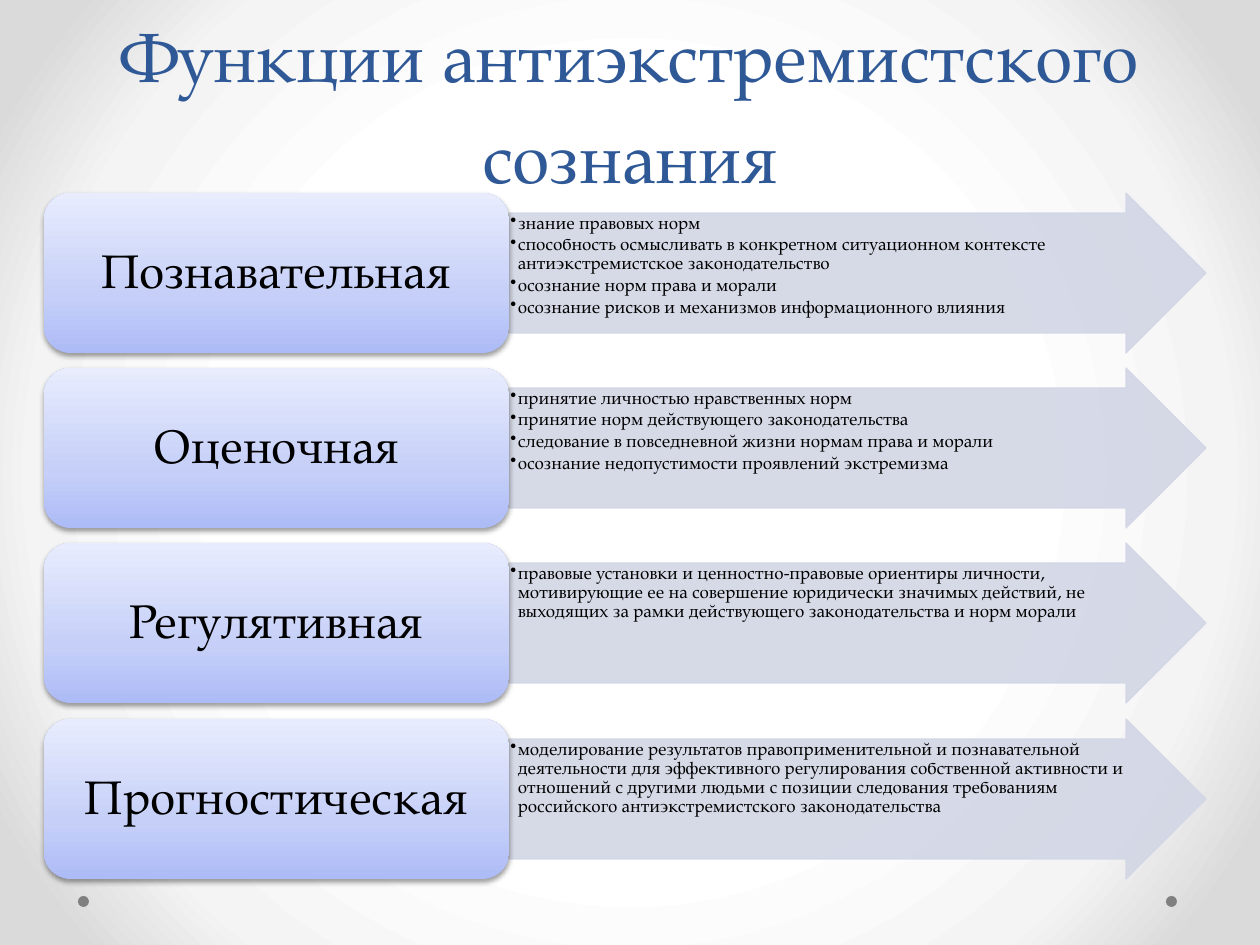
from dataclasses import dataclass

from pptx import Presentation
from pptx import util as u
from pptx.dml.color import RGBColor
from pptx.enum import shapes, text
from pptx.oxml import parse_xml
from pptx.oxml.ns import nsdecls, qn

PX = 914400 / 126  # EMU per pixel


@dataclass(frozen=True)
class Theme:
    font: str = "TeX Gyre Pagella"
    title_color: str = "2F5897"
    text_color: str = "000000"
    arrow_color: str = "D2D6E5"
    dot_color: str = "808080"
    title_size: int = 40
    label_size: int = 27
    item_size: int = 10
    background: tuple = ((50, "FFFFFF"), (76, "F4F4F4"), (92, "DADADA"))
    label_fill: tuple = ((0, "ADBBF6"), (35, "C5CFF8"), (100, "E8ECFD"))


THEME = Theme()
TITLE = "Функции антиэкстремистского сознания"
FUNCTIONS = {
    "Познавательная": [
        "знание правовых норм",
        "способность осмысливать в конкретном ситуационном контексте "
        "антиэкстремистское законодательство",
        "осознание норм права и морали",
        "осознание рисков и механизмов информационного влияния",
    ],
    "Оценочная": [
        "принятие личностью нравственных норм",
        "принятие норм действующего законодательства",
        "следование в повседневной жизни нормам права и морали",
        "осознание недопустимости проявлений экстремизма",
    ],
    "Регулятивная": [
        "правовые установки и ценностно-правовые ориентиры личности, "
        "мотивирующие ее на совершение юридически значимых действий, не "
        "выходящих за рамки действующего законодательства и норм морали",
    ],
    "Прогностическая": [
        "моделирование результатов правоприменительной и познавательной "
        "деятельности для эффективного регулирования собственной активности и "
        "отношений с другими людьми с позиции следования требованиям "
        "российского антиэкстремистского законодательства",
    ],
}

# Row geometry in px
ROW_TOP, ROW_SPAN, ROW_HEIGHT = 193, 526, 160
LABEL_LEFT, LABEL_WIDTH, ARROW_WIDTH = 44, 465, 697


def px(*lengths):
    return [u.Emu(round(length * PX)) for length in lengths]


def set_values(target, values):
    for name, value in values.items():
        setattr(target, name, value)


def write_paragraph(paragraph, content, size, color, **values):
    paragraph.text = content
    set_values(paragraph, values)
    set_values(paragraph.font, {"name": THEME.font, "size": u.Pt(size)})
    paragraph.font.color.rgb = RGBColor.from_string(color)


def format_frame(frame, anchor, side, edge):
    set_values(frame, {
        "word_wrap": True, "vertical_anchor": anchor,
        "margin_left": side, "margin_right": side,
        "margin_top": edge, "margin_bottom": edge,
    })


def add_shape(slide, kind, box, color):
    shape = slide.shapes.add_shape(kind, *px(*box))
    shape.shadow.inherit = False
    shape.fill.solid()
    shape.fill.fore_color.rgb = RGBColor.from_string(color)
    shape.line.fill.background()
    return shape


def replace_with_gradient(properties, stops, direction):
    """Swap the solid fill of a property element for a gradient."""
    stop_xml = "".join(
        f'<a:gs pos="{position * 1000}"><a:srgbClr val="{color}"/></a:gs>'
        for position, color in stops)
    gradient = parse_xml(
        f'<a:gradFill {nsdecls("a")} rotWithShape="1">'
        f"<a:gsLst>{stop_xml}</a:gsLst>{direction}</a:gradFill>")
    properties.replace(properties.find(qn("a:solidFill")), gradient)


def paint_background(slide):
    slide.background.fill.solid()
    replace_with_gradient(
        slide.element.find(".//" + qn("p:bgPr")), THEME.background,
        '<a:path path="circle"><a:fillToRect l="50000" t="50000" r="50000" '
        'b="50000"/></a:path>')


def add_title(slide):
    title = slide.shapes.title
    set_values(title, dict(zip(("left", "top", "width", "height"),
                               px(63, 47, 1134, 157))))
    frame = title.text_frame
    format_frame(frame, text.MSO_ANCHOR.BOTTOM, u.Inches(0.1), u.Inches(0.05))
    frame.auto_size = text.MSO_AUTO_SIZE.NONE
    write_paragraph(frame.paragraphs[0], TITLE, THEME.title_size,
                    THEME.title_color, alignment=text.PP_ALIGN.CENTER,
                    line_spacing=u.Pt(58))


def add_bullet(paragraph):
    properties = paragraph._p.get_or_add_pPr()
    indent = u.Inches(0.06)
    properties.set("marL", str(indent))
    properties.set("indent", str(-indent))
    properties.append(parse_xml(f'<a:buChar {nsdecls("a")} char="•"/>'))


def add_arrow(slide, top, items):
    arrow = add_shape(
        slide, shapes.MSO_SHAPE.RIGHT_ARROW,
        (LABEL_LEFT + LABEL_WIDTH, top, ARROW_WIDTH, ROW_HEIGHT),
        THEME.arrow_color)
    arrow.adjustments[0] = 0.75
    arrow.line.color.rgb = RGBColor.from_string(THEME.arrow_color)
    arrow.line.width = u.Pt(0.75)
    # Fill and outline are slightly transparent
    for color in arrow._element.spPr.iter(qn("a:srgbClr")):
        color.append(parse_xml(f'<a:alpha {nsdecls("a")} val="90000"/>'))

    frame = arrow.text_frame
    format_frame(frame, text.MSO_ANCHOR.TOP, u.Inches(0.01), u.Inches(0.01))
    for index, item in enumerate(items):
        paragraph = frame.add_paragraph() if index else frame.paragraphs[0]
        write_paragraph(paragraph, item, THEME.item_size, THEME.text_color,
                        level=1, alignment=text.PP_ALIGN.LEFT,
                        line_spacing=0.9, space_after=u.Pt(1.5))
        add_bullet(paragraph)


def add_label(slide, top, name):
    label = add_shape(slide, shapes.MSO_SHAPE.ROUNDED_RECTANGLE,
                      (LABEL_LEFT, top, LABEL_WIDTH, ROW_HEIGHT),
                      THEME.label_fill[0][1])
    properties = label._element.spPr
    replace_with_gradient(properties, THEME.label_fill,
                          '<a:lin ang="16200000" scaled="0"/>')
    properties.find(qn("a:effectLst")).append(parse_xml(
        f'<a:outerShdw {nsdecls("a")} blurRad="{u.Pt(3.1)}" '
        f'dist="{u.Pt(1.6)}" dir="5400000" rotWithShape="0">'
        '<a:srgbClr val="000000"><a:alpha val="38000"/></a:srgbClr>'
        "</a:outerShdw>"))

    frame = label.text_frame
    format_frame(frame, text.MSO_ANCHOR.MIDDLE, u.Inches(0.11), u.Inches(0.06))
    write_paragraph(frame.paragraphs[0], name, THEME.label_size,
                    THEME.text_color, alignment=text.PP_ALIGN.CENTER,
                    line_spacing=0.9)


def main():
    presentation = Presentation()
    presentation.slide_width, presentation.slide_height = px(1260, 945)
    slide = presentation.slides.add_slide(presentation.slide_layouts[5])

    # Backdrop and title
    paint_background(slide)
    for left in (1166, 78):
        add_shape(slide, shapes.MSO_SHAPE.OVAL, (left, 896, 11, 11),
                  THEME.dot_color)
    add_title(slide)

    # One row per function: arrow behind, label in front
    for index, (name, items) in enumerate(FUNCTIONS.items()):
        top = ROW_TOP + index * ROW_SPAN // (len(FUNCTIONS) - 1)
        add_arrow(slide, top, items)
        add_label(slide, top, name)

    presentation.save("out.pptx")


if __name__ == "__main__":
    main()
